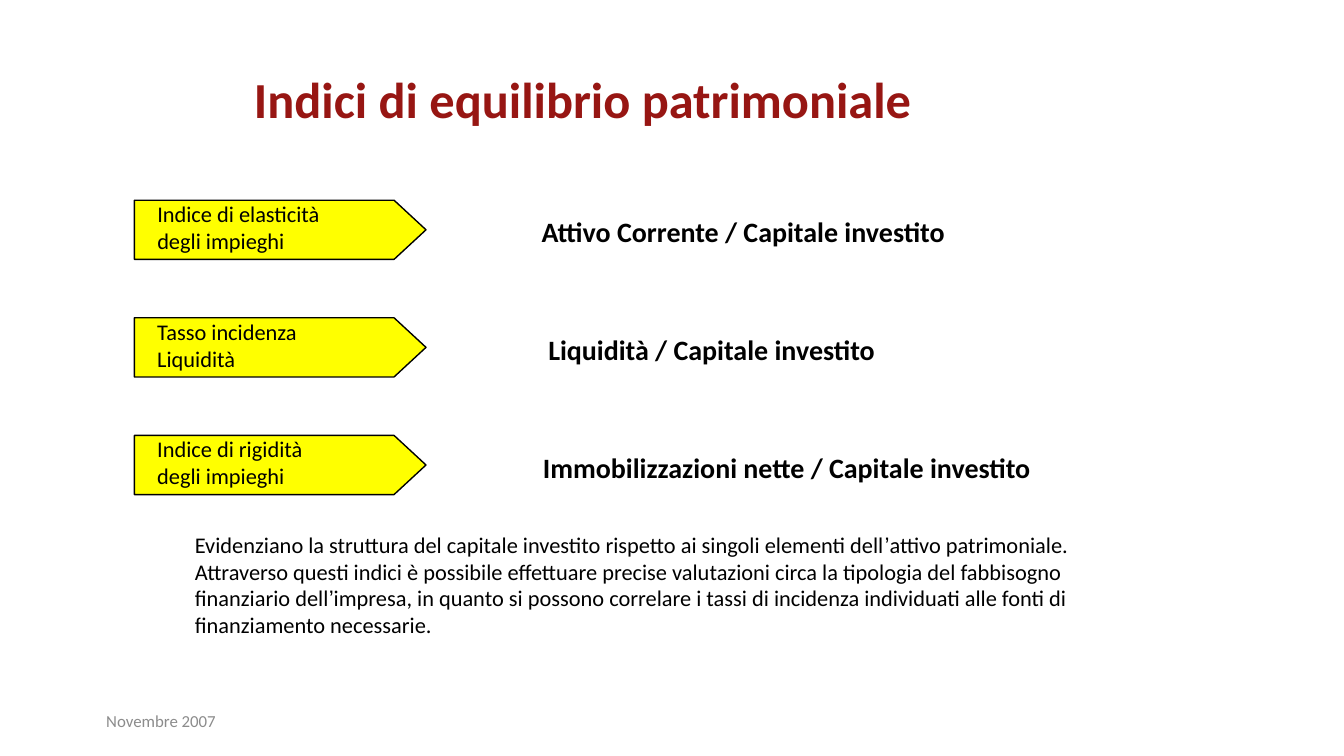
from pptx import Presentation
from pptx.dml.color import RGBColor
from pptx.enum.shapes import MSO_SHAPE
from pptx.enum.text import MSO_ANCHOR, MSO_AUTO_SIZE, PP_ALIGN
from pptx.util import Inches, Pt

BLACK = RGBColor(0x00, 0x00, 0x00)
YELLOW = RGBColor(0xFF, 0xFF, 0x00)
RED = RGBColor(0x97, 0x16, 0x13)
GRAY = RGBColor(0x8C, 0x8C, 0x8C)

TITLE = "Indici di equilibrio patrimoniale"
DATE = "Novembre 2007"
RATIOS = [
    (["Indice di elasticità", "degli impieghi"], 1.41,
     "Attivo Corrente / Capitale investito", 3.94, 3.23),
    (["Tasso incidenza", "Liquidità"], 1.24,
     "Liquidità / Capitale investito", 3.99, 2.64),
    (["Indice di rigidità", "degli impieghi"], 1.27,
     "Immobilizzazioni nette / Capitale investito", 3.95, 3.86),
]
NOTE = [
    "Evidenziano la struttura del capitale investito rispetto ai singoli elementi dell’attivo patrimoniale.",
    "Attraverso questi indici è possibile effettuare precise valutazioni circa la tipologia del fabbisogno",
    "finanziario dell’impresa, in quanto si possono correlare i tassi di incidenza individuati alle fonti di ",
    "finanziamento necessarie.",
]
WIDE = 10
HIGH = WIDE * 9 / 16
TOP, STEP = 1.49, 7 / 8


def place(shape, box):
    shape.left, shape.top, shape.width, shape.height = map(Inches, box)


def write(shape, lines, size, color=BLACK, bold=False, align=PP_ALIGN.LEFT,
          anchor=MSO_ANCHOR.TOP, wrap=False):
    frame = shape.text_frame
    frame.auto_size = MSO_AUTO_SIZE.NONE
    frame.word_wrap = wrap
    frame.vertical_anchor = anchor
    frame.margin_left = frame.margin_right = Inches(0.09)
    frame.margin_top = frame.margin_bottom = Inches(0.04)
    frame.text = "\n".join(lines)
    for para, line in zip(frame.paragraphs, lines):
        para.alignment = align
        head, mark, tail = line.partition("’")
        para.runs[0].text = head
        for part in filter(None, (mark, tail)):
            para.add_run().text = part
        for run in para.runs:
            font = run.font
            font.name = "Arial" if run.text == "’" else "Calibri"
            font.size, font.bold = Pt(size), bold
            font.color.rgb = color


def label(slide, box, lines, size, **style):
    write(slide.shapes.add_textbox(*map(Inches, box)), lines, size, **style)


def arrow(slide, top):
    shape = slide.shapes.add_shape(
        MSO_SHAPE.PENTAGON, *map(Inches, (1, top, 2.17, 0.44)))
    shape.adjustments[0] = 0.54
    shape.shadow.inherit = False
    shape.fill.solid()
    shape.fill.fore_color.rgb = YELLOW
    shape.line.color.rgb = BLACK
    shape.line.width = Pt(0.75)


def main():
    deck = Presentation()
    deck.slide_width, deck.slide_height = Inches(WIDE), Inches(HIGH)
    slide = deck.slides.add_slide(deck.slide_layouts[5])

    title = slide.shapes.title
    place(title, (0.17, 0.44, 8.33, 0.56))
    write(title, [TITLE], 27, color=RED, bold=True, align=PP_ALIGN.CENTER,
          anchor=MSO_ANCHOR.BOTTOM, wrap=True)

    for row, (name, wide, ratio, left, span) in enumerate(RATIOS):
        top = TOP + row * STEP
        arrow(slide, top)
        label(slide, (1.08, top - 0.04, wide, 0.49), name, 12)
        label(slide, (left, top + 0.07, span, 0.34), [ratio], 15, bold=True)

    label(slide, (1.36, 3.91, 6.81, 1.2), NOTE, 12, align=PP_ALIGN.JUSTIFY)
    label(slide, (0.7, 5.21, 2.25, 0.3), [DATE], 9, color=GRAY,
          anchor=MSO_ANCHOR.MIDDLE, wrap=True)
    deck.save("out.pptx")


if __name__ == "__main__":
    main()
